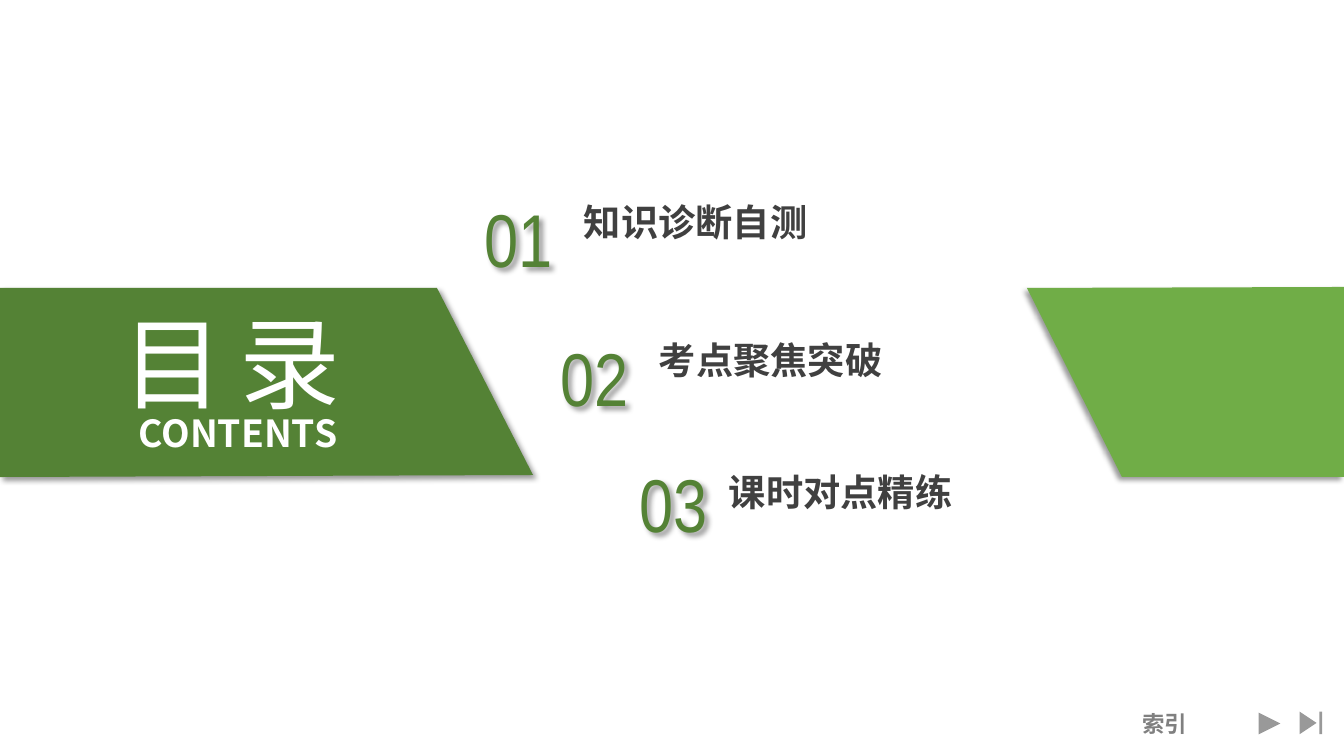
"""Build a contents slide with three staggered chapters between two green bands."""
from lxml import etree
from pptx import Presentation
from pptx import util as u
from pptx.dml.color import RGBColor
from pptx.enum import shapes, text
from pptx.oxml import ns

COLORS = {"dark": "548235", "light": "70AD47", "ink": "404040",
          "white": "FFFFFF", "gray": "808080", "black": "000000"}
CJK, NARROW = "Noto Sans CJK SC", "Arial Narrow"
SCALE = 914400 / 100.8

HEADING = ("目 录", (112, 296, 320, 132))
SUBHEADING = ("CONTENTS", (122, 405, 232, 55))
CHAPTERS = [
    ("01", (475, 188), "知识诊断自测", (574, 194)),
    ("02", (551, 327), "考点聚焦突破", (649, 332)),
    ("03", (630, 453), "课时对点精练", (719, 464)),
]
INDEX = ("索引", (1123, 711, 83, 25))
BANDS = [
    ([(0, 288), (437, 288), (533, 475), (0, 477)], "dark", 45),
    ([(1027, 288), (1344, 287), (1344, 477), (1122, 477)], "light", 135),
]
BUTTONS = [
    (shapes.MSO_SHAPE.ACTION_BUTTON_FORWARD_OR_NEXT, (1255, 709, 29, 29)),
    (shapes.MSO_SHAPE.ACTION_BUTTON_END, (1296, 708, 30, 30)),
]


def px(value):
    return u.Emu(round(value * SCALE))


def rgb(name):
    return RGBColor.from_string(COLORS[name])


def paint(part, color):
    part.shadow.inherit = False
    part.fill.solid()
    part.fill.fore_color.rgb = rgb(color)
    part.line.fill.background()


def cast_shadow(part, degrees):
    part.shadow.inherit = False
    effects = part._element.spPr.find(ns.qn("a:effectLst"))
    outer = etree.SubElement(effects, ns.qn("a:outerShdw"), blurRad=str(u.Pt(4)),
                             dist=str(u.Pt(3)), dir=str(degrees * 60000),
                             algn="ctr", rotWithShape="0")
    tint = etree.SubElement(outer, ns.qn("a:srgbClr"), val=COLORS["black"])
    etree.SubElement(tint, ns.qn("a:alpha"), val="40000")


def write(words, box, size, color, font=CJK, bold=False, align="LEFT",
          anchor="TOP", wrap=False, spacing=None, holder=None):
    left, top, width, height = map(px, box)
    if holder is None:
        holder = slide.shapes.add_textbox(left, top, width, height)
    else:
        holder.left, holder.top, holder.width, holder.height = left, top, width, height
    frame = holder.text_frame
    frame.auto_size = text.MSO_AUTO_SIZE.NONE
    frame.word_wrap = wrap
    frame.vertical_anchor = text.MSO_ANCHOR[anchor]
    line = frame.paragraphs[0]
    line.alignment = text.PP_ALIGN[align]
    run = line.add_run()
    run.text = words
    run.font.size, run.font.bold, run.font.name = u.Pt(size), bold, font
    run.font.color.rgb = rgb(color)
    props = run.font._element
    props.find(ns.qn("a:latin")).addnext(
        etree.Element(ns.qn("a:ea"), typeface=font))
    if spacing is not None:
        props.set("spc", str(spacing * 100))
    return holder


deck = Presentation()
deck.slide_width, deck.slide_height = px(1344), px(756)
slide = deck.slides.add_slide(deck.slide_layouts[5])
slide.background.fill.solid()
slide.background.fill.fore_color.rgb = rgb("white")

for preset, box in BUTTONS:
    paint(slide.shapes.add_shape(preset, *map(px, box)), "white")
write(*INDEX, 16, "gray", bold=True, align="CENTER", anchor="MIDDLE")

for corners, color, degrees in BANDS:
    outline = slide.shapes.build_freeform(*corners[0], scale=SCALE)
    outline.add_line_segments(corners[1:], close=True)
    band = outline.convert_to_shape()
    paint(band, color)
    cast_shadow(band, degrees)

heading = slide.shapes.title
slide.shapes._spTree.append(heading._element)
write(*HEADING, 72, "white", wrap=True, spacing=-2, holder=heading)
write(*SUBHEADING, 26.6, "white", bold=True, align="CENTER")

for number, number_at, chapter, chapter_at in CHAPTERS:
    write(chapter, (*chapter_at, 244, 55), 26.6, "ink", bold=True)
    cast_shadow(write(number, (*number_at, 90, 101), 53.4, "dark", font=NARROW), 45)

deck.save("out.pptx")
